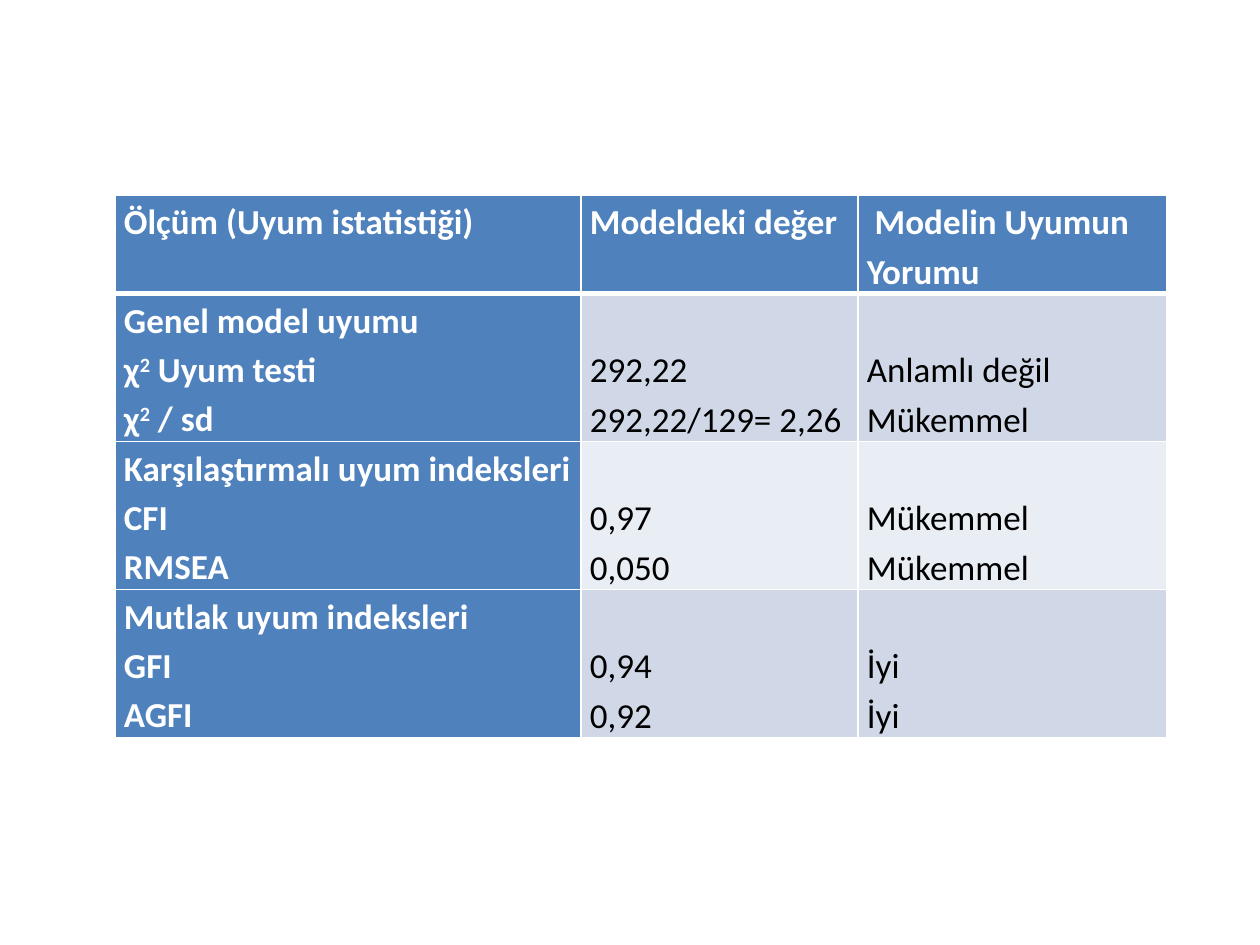
from lxml import etree
from pptx import Presentation
from pptx.dml.color import RGBColor
from pptx.enum.text import MSO_ANCHOR
from pptx.oxml.ns import qn
from pptx.util import Emu, Pt

PX = 914400 // 126
BLUE = RGBColor(0x4F, 0x81, 0xBD)
BAND_DARK = RGBColor(0xD0, 0xD8, 0xE8)
BAND_LIGHT = RGBColor(0xE9, 0xED, 0xF4)
WHITE = RGBColor(0xFF, 0xFF, 0xFF)
BLACK = RGBColor(0, 0, 0)
TOP, BOTTOM = MSO_ANCHOR.TOP, MSO_ANCHOR.BOTTOM

COLUMN_WIDTHS = [466, 277, 309]
ROW_HEIGHTS = [98, 148, 148, 148]
FIT_ROWS = [
    [["Ölçüm (Uyum istatistiği)"], ["Modeldeki değer"], [" Modelin Uyumun Yorumu"]],
    [["Genel model uyumu", "χ² Uyum testi", "χ² / sd"],
     ["292,22", "292,22/129= 2,26"], ["Anlamlı değil", "Mükemmel"]],
    [["Karşılaştırmalı uyum indeksleri", "CFI", "RMSEA"],
     ["0,97", "0,050"], ["Mükemmel", "Mükemmel"]],
    [["Mutlak uyum indeksleri", "GFI", "AGFI"],
     ["0,94", "0,92"], ["İyi", "İyi"]],
]


def px(length):
    return Emu(length * PX)


def add_span(para, text, color, bold, size=20, superscript=False):
    span = para.add_run()
    span.text = text
    font = span.font
    font.name, font.size, font.bold = "Calibri", Pt(size), bold
    font.color.rgb = color
    if superscript:
        font._element.set("baseline", "30000")


def write_text(frame, lines, **style):
    """Write one paragraph per line, with ² set as a superscript 2."""
    for index, line in enumerate(lines):
        para = frame.paragraphs[0] if index == 0 else frame.add_paragraph()
        para.line_spacing = 1.15
        before, square, after = line.partition("²")
        add_span(para, before, **style)
        if square:
            add_span(para, "2", superscript=True, **style)
            add_span(para, after, **style)


def set_borders(cell, **widths):
    """Draw white borders, given in points by side: L, R, T, B."""
    properties = cell._tc.get_or_add_tcPr()
    for index, (side, width) in enumerate(widths.items()):
        line = etree.Element(qn(f"a:ln{side}"), w=str(Pt(width)))
        fill = etree.SubElement(line, qn("a:solidFill"))
        etree.SubElement(fill, qn("a:srgbClr"), val=str(WHITE))
        properties.insert(index, line)


def format_cell(cell, lines, row, column):
    is_heading = row == 0 or column == 0
    band = BAND_DARK if row % 2 else BAND_LIGHT
    cell.margin_left = cell.margin_right = px(9)
    cell.margin_top = cell.margin_bottom = 0
    cell.vertical_anchor = TOP if is_heading else BOTTOM
    cell.fill.solid()
    cell.fill.fore_color.rgb = BLUE if is_heading else band
    set_borders(cell, L=1, R=1, T=3 if row == 1 else 1, B=3 if row == 0 else 1)
    write_text(cell.text_frame, lines,
               color=WHITE if is_heading else BLACK, bold=is_heading)


def add_fit_table(page, left, top):
    frame = page.shapes.add_table(
        len(ROW_HEIGHTS), len(COLUMN_WIDTHS), px(left), px(top),
        px(sum(COLUMN_WIDTHS)), px(sum(ROW_HEIGHTS)))
    table = frame.table
    table.first_row = table.horz_banding = False
    for column, width in zip(table.columns, COLUMN_WIDTHS):
        column.width = px(width)
    for row, height in zip(table.rows, ROW_HEIGHTS):
        row.height = px(height)
    for row, cells in enumerate(FIT_ROWS):
        for column, lines in enumerate(cells):
            format_cell(table.cell(row, column), lines, row, column)


def main():
    deck = Presentation()
    deck.slide_width, deck.slide_height = px(1260), px(945)
    page = deck.slides.add_slide(deck.slide_layouts[6])
    add_fit_table(page, left=115, top=195)
    deck.save("out.pptx")


if __name__ == "__main__":
    main()
